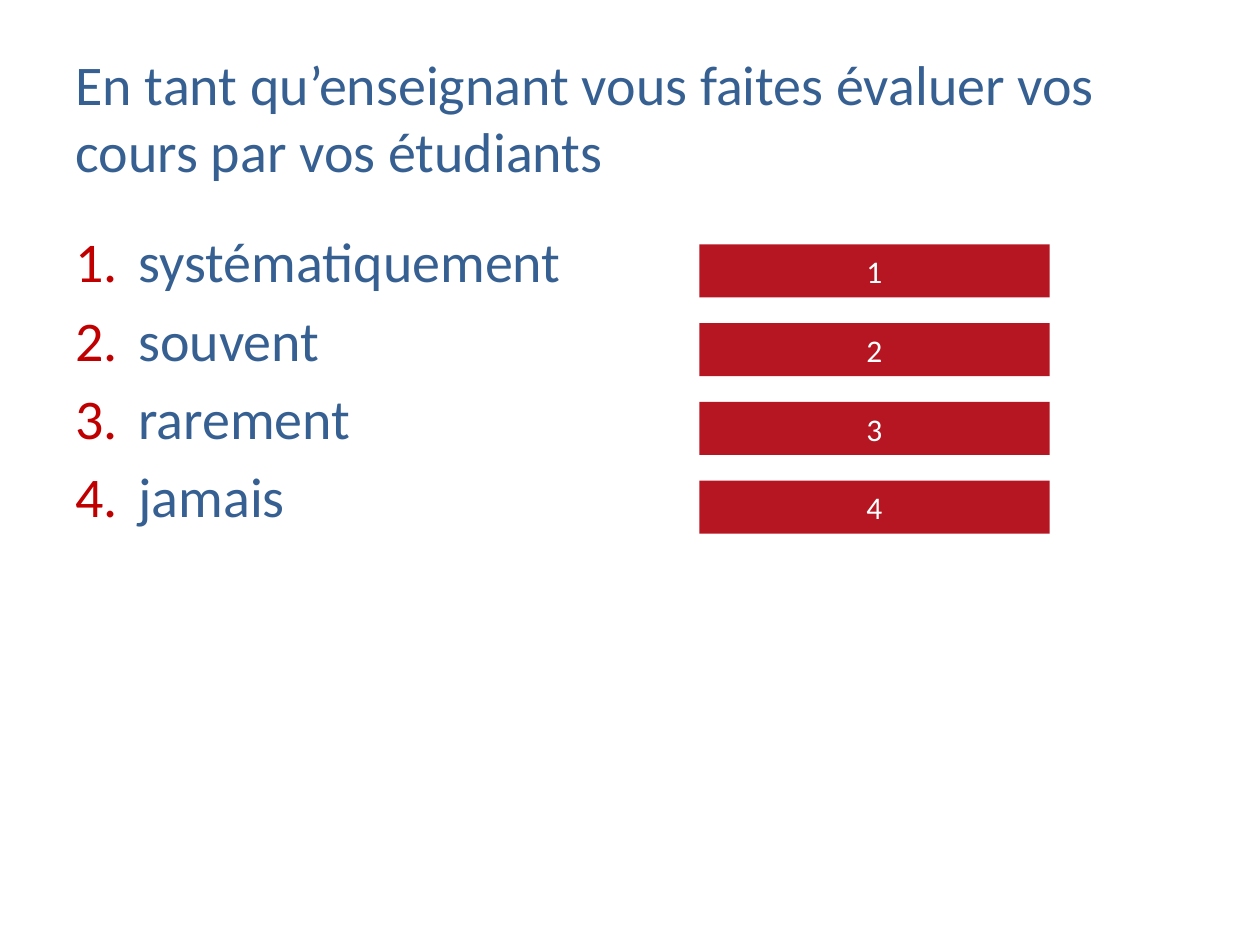
from dataclasses import dataclass

from lxml import etree
from pptx import Presentation
from pptx.dml.color import RGBColor
from pptx.enum.shapes import MSO_SHAPE
from pptx.enum.text import MSO_ANCHOR, PP_ALIGN
from pptx.oxml.ns import qn
from pptx.util import Inches, Pt

RECT = MSO_SHAPE.RECTANGLE
MIDDLE = MSO_ANCHOR.MIDDLE
LEFT, CENTER = PP_ALIGN.LEFT, PP_ALIGN.CENTER
FONT = "Calibri"
BLUE, RED, CRIMSON, WHITE = "376092", "C00000", "B51621", "FFFFFF"
TOP, STEP = 1.94, 0.625


@dataclass
class Answer:
    rank: int
    text: str


ANSWERS = [
    Answer(rank, text)
    for rank, text in enumerate(
        ["systématiquement", "souvent", "rarement", "jamais"], 1
    )
]


def color(code: str) -> RGBColor:
    return RGBColor.from_string(code)


def style(para, size: float, code: str, align=LEFT) -> None:
    para.alignment = align
    para.font.name = FONT
    para.font.size = Pt(size)
    para.font.color.rgb = color(code)


def place(shape, left: float, top: float, width: float, height: float) -> None:
    shape.left, shape.top = Inches(left), Inches(top)
    shape.width, shape.height = Inches(width), Inches(height)


def number(para) -> None:
    props = para._p.get_or_add_pPr()
    props.set("marL", str(Inches(0.5)))
    props.set("indent", str(-Inches(0.5)))
    tint = etree.SubElement(props, qn("a:buClr"))
    etree.SubElement(tint, qn("a:srgbClr"), val=RED)
    etree.SubElement(props, qn("a:buFont"), typeface=FONT)
    etree.SubElement(props, qn("a:buAutoNum"), type="arabicPeriod")


def add_title(slide, text: str) -> None:
    title = slide.shapes.title
    place(title, 0.5, 0.3, 9, 1.25)
    frame = title.text_frame
    frame.text = text
    frame.word_wrap = True
    frame.vertical_anchor = MIDDLE
    style(frame.paragraphs[0], 32, BLUE)


def add_list(slide, answers: list[Answer]) -> None:
    box = slide.shapes.add_textbox(
        Inches(0.5), Inches(1.75), Inches(9), Inches(4.95)
    )
    frame = box.text_frame
    frame.word_wrap = True
    frame.text = "\n".join(answer.text for answer in answers)
    for para in frame.paragraphs:
        style(para, 32, BLUE)
        para.space_before = Pt(6.4)
        number(para)


def add_bar(group, answer: Answer) -> None:
    top = TOP + (answer.rank - 1) * STEP
    bar = group.shapes.add_shape(
        RECT, Inches(5.55), Inches(top), Inches(2.78), Inches(0.42)
    )
    bar.shadow.inherit = False
    bar.fill.solid()
    bar.fill.fore_color.rgb = color(CRIMSON)
    bar.line.fill.background()
    frame = bar.text_frame
    frame.text = str(answer.rank)
    frame.vertical_anchor = MIDDLE
    style(frame.paragraphs[0], 18, WHITE, CENTER)


def main() -> None:
    deck = Presentation()
    deck.slide_width, deck.slide_height = Inches(10), Inches(7.5)
    slide = deck.slides.add_slide(deck.slide_layouts[5])
    add_title(
        slide,
        "En tant qu’enseignant vous faites évaluer vos cours par vos étudiants",
    )
    add_list(slide, ANSWERS)
    group = slide.shapes.add_group_shape()
    for answer in ANSWERS:
        add_bar(group, answer)
    deck.save("out.pptx")


if __name__ == "__main__":
    main()
